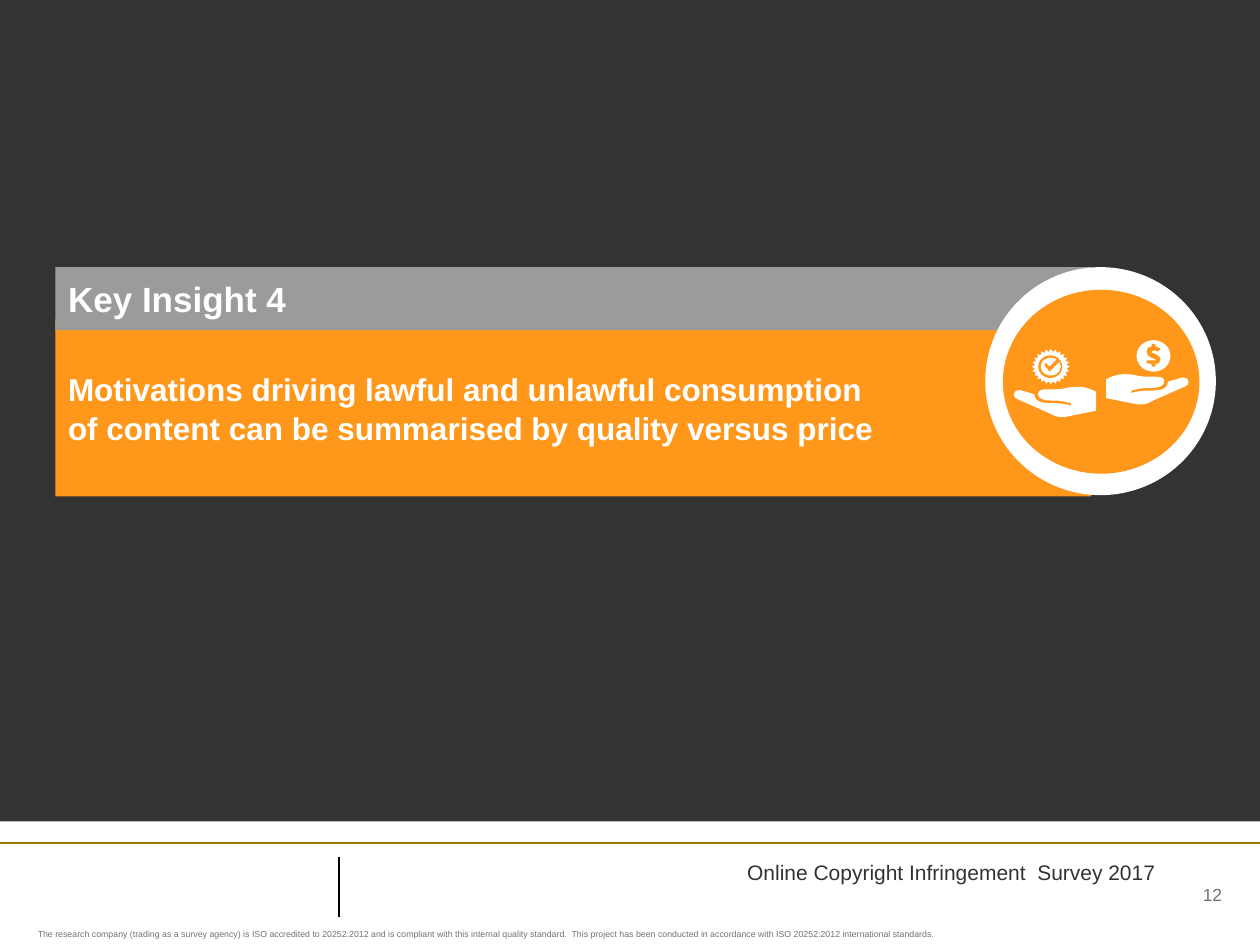
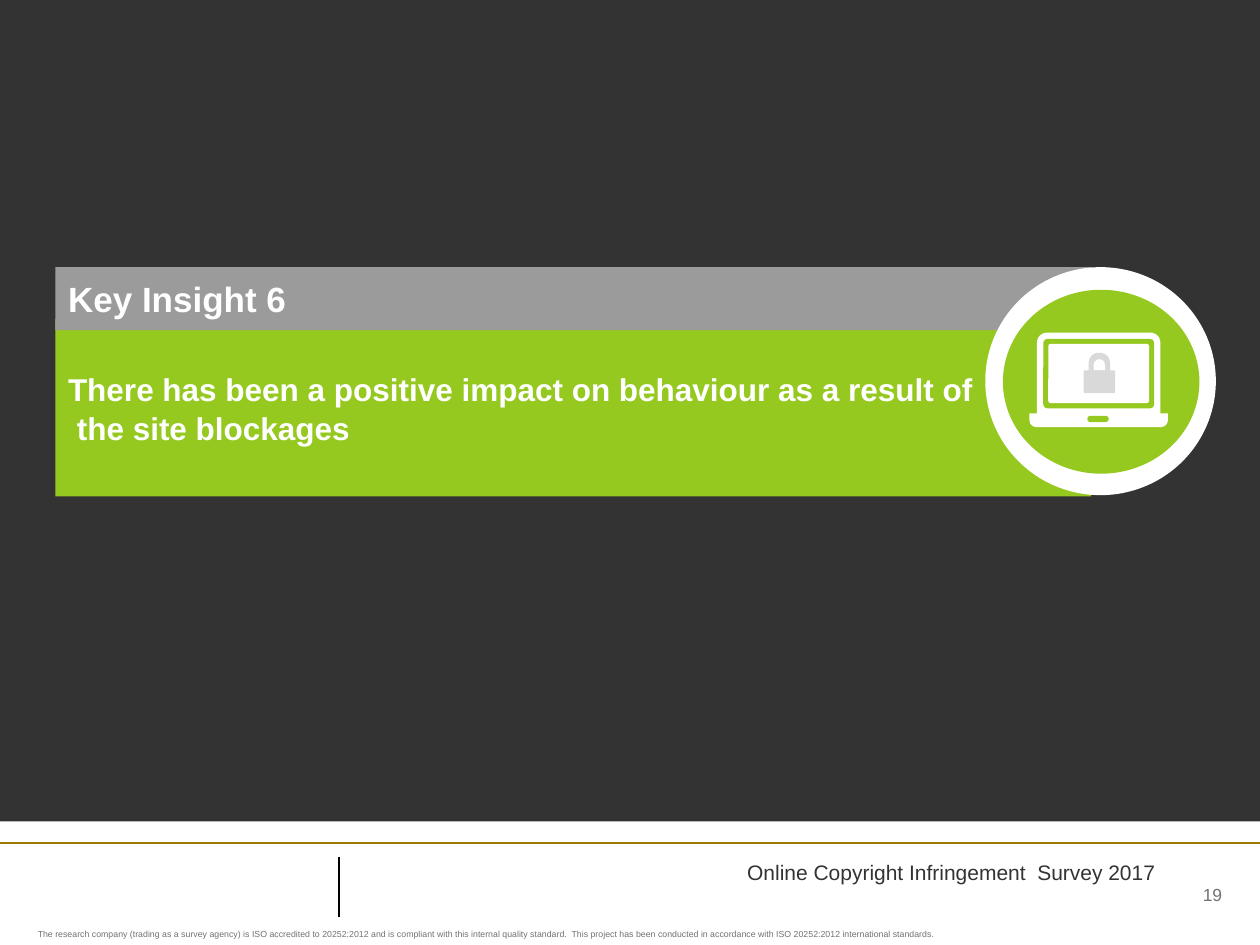
"""Build two key insight divider slides with shared bands, badge and footer."""
from dataclasses import dataclass

from pptx import Presentation
from pptx.dml.color import RGBColor
from pptx.enum.shapes import MSO_CONNECTOR, MSO_SHAPE
from pptx.enum.text import MSO_ANCHOR, MSO_AUTO_SIZE, PP_ALIGN
from pptx.oxml.ns import qn
from pptx.util import Inches, Pt

RECT = MSO_SHAPE.RECTANGLE
ROUND = MSO_SHAPE.ROUNDED_RECTANGLE
CAP = MSO_SHAPE.ROUND_2_SAME_RECTANGLE
OVAL = MSO_SHAPE.OVAL
STAR = MSO_SHAPE.STAR_24_POINT
LINE = MSO_CONNECTOR.STRAIGHT
LEFT, RIGHT = PP_ALIGN.LEFT, PP_ALIGN.RIGHT
TOP, MIDDLE = MSO_ANCHOR.TOP, MSO_ANCHOR.MIDDLE
FIXED = MSO_AUTO_SIZE.NONE

FONT = "Arial"
WHITE, BLACK, DARK = "FFFFFF", "000000", "333333"
BAND, MUTED, GOLD, LOCK = "9C9B9B", "717171", "9E7700", "D9D9D9"
ORANGE, GREEN = "FF971B", "96C920"

SURVEY = "Online Copyright Infringement  Survey 2017"
NOTICE = (
    "The research company (trading as a survey agency) is ISO accredited to "
    "20252:2012 and is compliant with this internal quality standard.  "
    "This project has been conducted in accordance with ISO 20252:2012 "
    "international standards."
)

Point = tuple[float, float]


@dataclass(frozen=True)
class Box:
    """Place on the slide, in inches."""
    left: float
    top: float
    width: float
    height: float

    def emu(self) -> tuple:
        """Give the four lengths for python-pptx."""
        return tuple(map(Inches, (self.left, self.top, self.width, self.height)))


@dataclass(frozen=True)
class Part:
    """Preset shape with one fill."""
    kind: int
    fill: str
    box: Box
    adj: tuple[float, ...] = ()


@dataclass(frozen=True)
class Blob:
    """Filled outline."""
    fill: str
    points: list[Point]


@dataclass(frozen=True)
class Style:
    """Look of a text."""
    size: float
    color: str
    bold: bool = False
    align: int = LEFT
    anchor: int = TOP
    inset: float = 0
    space: float = 1


@dataclass(frozen=True)
class Row:
    """Line of the message with its indent."""
    text: str
    indent: float = 0


@dataclass(frozen=True)
class Insight:
    """Content of one slide."""
    title: str
    rows: list[Row]
    page: str
    tint: str
    icon: list[Part | Blob]


HEAD = Style(20, WHITE, True, anchor=MIDDLE, inset=0.1)
LEAD = Style(18, WHITE, True, anchor=MIDDLE, inset=0.1, space=1.05)
NAME = Style(12, DARK)
SMALL = Style(5, MUTED)
PAGE = Style(10, MUTED, align=RIGHT, anchor=MIDDLE)

PALM_START = (9.37, 3)
PALM = [
    (9.34, 3.01, 9.3, 3.02, 9.27, 3.03),
    (9.27, 3.1, 9.18, 3.1, 9.12, 3.1),
    (9.06, 3.1, 9.01, 3.11, 8.98, 3.12),
    (8.98, 3.1),
    (9.02, 3.09, 9.06, 3.08, 9.1, 3.08),
    (9.15, 3.08, 9.24, 3.08, 9.24, 3.03),
    (9.24, 2.99, 9.2, 2.99, 9.15, 2.99),
    (9.11, 2.99),
    (9.02, 2.99, 9.02, 2.97, 8.92, 2.97),
    (8.85, 2.97, 8.78, 3.01, 8.78, 3.01),
    (8.78, 3.16),
    (9.03, 3.21),
    (9.05, 3.21, 9.09, 3.21, 9.11, 3.2),
    (9.19, 3.16, 9.38, 3.08, 9.4, 3.07),
    (9.46, 3.05, 9.43, 2.98, 9.37, 3),
]
DOLLAR = [
    (9.11, 2.76), (9.14, 2.75), (9.14, 2.73), (9.17, 2.73), (9.17, 2.75),
    (9.2, 2.76), (9.21, 2.77), (9.19, 2.79), (9.16, 2.78), (9.14, 2.79),
    (9.14, 2.8), (9.17, 2.81), (9.2, 2.83), (9.21, 2.85), (9.2, 2.88),
    (9.17, 2.89), (9.17, 2.91), (9.14, 2.91), (9.14, 2.89), (9.1, 2.88),
    (9.1, 2.86), (9.13, 2.86), (9.17, 2.86), (9.17, 2.85), (9.14, 2.84),
    (9.11, 2.82), (9.1, 2.79),
]
CHECK = [(8.29, 2.9), (8.3, 2.88), (8.33, 2.91), (8.39, 2.85),
         (8.41, 2.87), (8.33, 2.95)]


def trace(start: Point, moves: list[tuple], steps: int = 8) -> list[Point]:
    """Turn lines and cubic curves into points."""
    points = [start]
    for move in moves:
        if len(move) == 2:
            points.append(move)
            continue
        x, y = points[-1]
        a, b, c, d, e, f = move
        for step in range(1, steps + 1):
            t = step / steps
            u = 1 - t
            w = (u ** 3, 3 * u * u * t, 3 * u * t * t, t ** 3)
            points.append((
                sum(k * v for k, v in zip(w, (x, a, c, e))),
                sum(k * v for k, v in zip(w, (y, b, d, f))),
            ))
    return points


def hands(tint: str) -> list[Part | Blob]:
    """Describe two open hands, one with a seal and one with a coin."""
    palm = trace(PALM_START, PALM)
    twin = [(17.48 - x, y + 0.1) for x, y in palm]
    return [
        Blob(WHITE, palm),
        Part(OVAL, WHITE, Box(9.02, 2.7, 0.27, 0.25)),
        Blob(tint, DOLLAR),
        Blob(WHITE, twin),
        Part(STAR, WHITE, Box(8.19, 2.77, 0.3, 0.28), (0.42,)),
        Part(OVAL, tint, Box(8.24, 2.82, 0.19, 0.18)),
        Part(OVAL, WHITE, Box(8.26, 2.84, 0.16, 0.14)),
        Blob(tint, CHECK),
    ]


def laptop(tint: str) -> list[Part | Blob]:
    """Describe a laptop with a padlock on its screen."""
    return [
        Part(CAP, WHITE, Box(8.23, 2.64, 0.98, 0.66), (0.12, 0)),
        Part(ROUND, tint, Box(8.28, 2.69, 0.88, 0.55), (0.06,)),
        Part(ROUND, WHITE, Box(8.32, 2.73, 0.8, 0.47), (0.04,)),
        Part(CAP, WHITE, Box(8.17, 3.28, 1.1, 0.11), (0, 0.5)),
        Part(ROUND, tint, Box(8.63, 3.3, 0.17, 0.05), (0.5,)),
        Part(CAP, LOCK, Box(8.64, 2.8, 0.17, 0.16), (0.5, 0)),
        Part(CAP, WHITE, Box(8.68, 2.85, 0.09, 0.09), (0.5, 0)),
        Part(ROUND, LOCK, Box(8.6, 2.94, 0.25, 0.18), (0.04,)),
    ]


def rgb(code: str) -> RGBColor:
    """Read a hex colour."""
    return RGBColor.from_string(code)


def paint(shape, code: str) -> None:
    """Fill a shape flat."""
    shape.fill.solid()
    shape.fill.fore_color.rgb = rgb(code)
    shape.line.fill.background()


def draw(slide, item: Part | Blob):
    """Draw a preset shape or an outline."""
    if isinstance(item, Blob):
        spots = [(Inches(x), Inches(y)) for x, y in item.points]
        pen = slide.shapes.build_freeform(*spots[0])
        pen.add_line_segments(spots[1:], close=True)
        shape = pen.convert_to_shape()
    else:
        shape = slide.shapes.add_shape(item.kind, *item.box.emu())
        for index, value in enumerate(item.adj):
            shape.adjustments[index] = value
    shape.shadow.inherit = False
    paint(shape, item.fill)
    return shape


def rule(slide, start: Point, end: Point, code: str, width: float) -> None:
    """Draw a straight line."""
    line = slide.shapes.add_connector(LINE, *map(Inches, start + end))
    line.line.color.rgb = rgb(code)
    line.line.width = Pt(width)
    props = line.element.spPr
    props.append(props.makeelement(qn("a:effectLst"), {}))


def write(shape, rows: list[Row], style: Style) -> None:
    """Set the text of a shape."""
    frame = shape.text_frame
    frame.word_wrap = True
    frame.auto_size = FIXED
    frame.vertical_anchor = style.anchor
    frame.margin_left = frame.margin_right = Inches(style.inset)
    frame.margin_top = frame.margin_bottom = Inches(style.inset / 2)
    for index, row in enumerate(rows):
        para = frame.add_paragraph() if index else frame.paragraphs[0]
        props = para._p.get_or_add_pPr()
        props.set("marL", str(Inches(row.indent)))
        props.set("indent", "0")
        props.append(props.makeelement(qn("a:buNone"), {}))
        para.alignment = style.align
        para.space_before = para.space_after = Pt(0)
        para.line_spacing = style.space
        run = para.add_run()
        run.text = row.text
        font = run.font
        font.name, font.size, font.bold = FONT, Pt(style.size), style.bold
        font.color.rgb = rgb(style.color)


def label(slide, box: Box, text: str, style: Style) -> None:
    """Add a text box."""
    write(slide.shapes.add_textbox(*box.emu()), [Row(text)], style)


def place(shape, box: Box, code: str) -> None:
    """Move a placeholder and fill it."""
    shape.left, shape.top, shape.width, shape.height = box.emu()
    paint(shape, code)


def footer(slide, page: str) -> None:
    """Draw the footer that all slides share."""
    rule(slide, (0, 6.69), (10, 6.69), GOLD, 1.5)
    rule(slide, (2.69, 6.8), (2.69, 7.28), BLACK, 1)
    label(slide, Box(0.3, 7.37, 9.4, 0.08), NOTICE, SMALL)
    label(slide, Box(5.93, 6.82, 3.59, 0.42), SURVEY, NAME)
    label(slide, Box(8.9, 7, 0.8, 0.2), page, PAGE)


def build(deck, insight: Insight) -> None:
    """Add one insight slide."""
    slide = deck.slides.add_slide(deck.slide_layouts[1])
    title, body = slide.shapes.title, slide.placeholders[1]
    footer(slide, insight.page)
    panel = draw(slide, Part(RECT, DARK, Box(0, 0, 10, 6.52)))
    place(body, Box(0.44, 2.53, 8.22, 1.41), insight.tint)
    write(body, insight.rows, LEAD)
    place(title, Box(0.44, 2.12, 8.22, 0.5), BAND)
    write(title, [Row(insight.title)], HEAD)
    panel.element.addnext(body.element)
    body.element.addnext(title.element)
    draw(slide, Part(OVAL, WHITE, Box(7.82, 2.12, 1.83, 1.81)))
    draw(slide, Part(OVAL, insight.tint, Box(7.96, 2.3, 1.56, 1.46)))
    for item in insight.icon:
        draw(slide, item)


def main() -> None:
    """Build and save the deck."""
    deck = Presentation()
    deck.slide_width, deck.slide_height = Inches(10), Inches(7.5)
    build(deck, Insight("Key Insight 4", [
        Row("Motivations driving lawful and unlawful consumption"),
        Row("of content can be summarised by quality versus price"),
    ], "12", ORANGE, hands(ORANGE)))
    build(deck, Insight("Key Insight 6", [
        Row("There has been a positive impact on behaviour as a result of"),
        Row("the site blockages", 0.07),
    ], "19", GREEN, laptop(GREEN)))
    deck.save("out.pptx")


if __name__ == "__main__":
    main()
